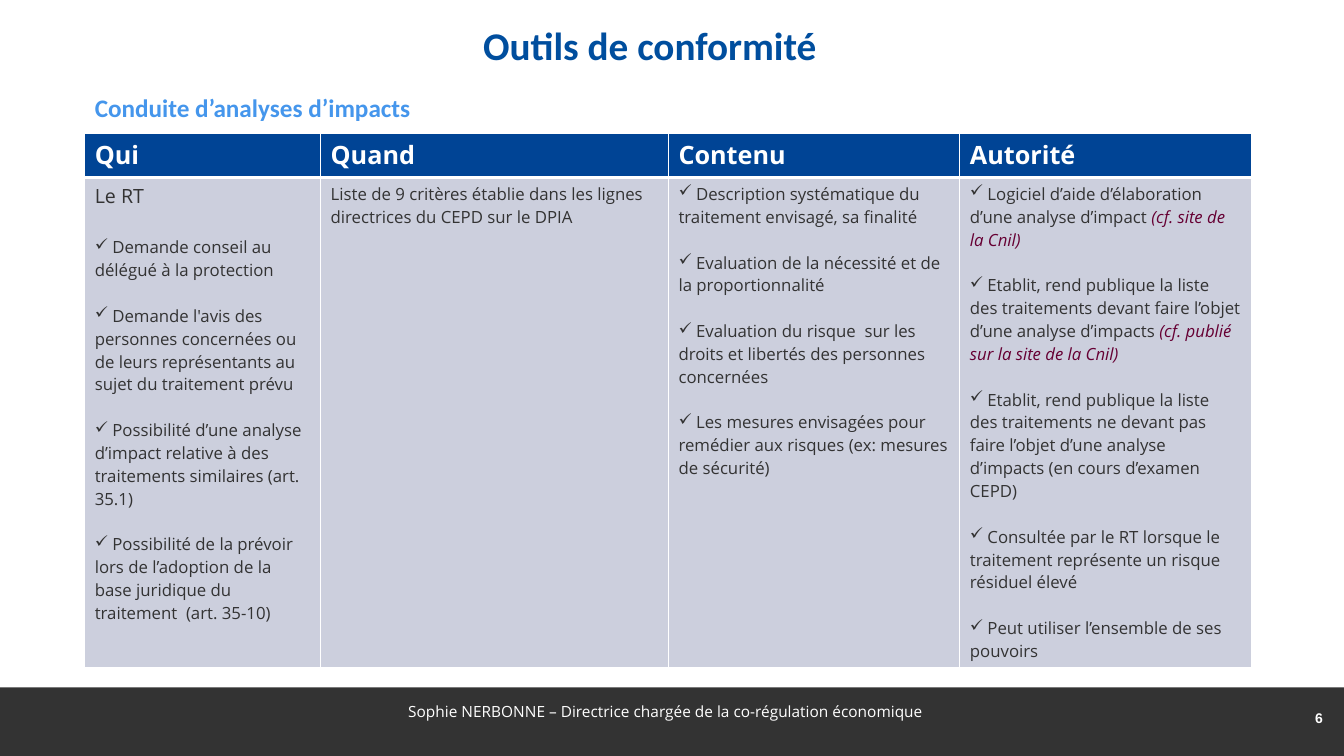
from lxml import etree
from pptx import Presentation
from pptx import util as u
from pptx.dml.color import RGBColor
from pptx.enum import shapes, text
from pptx.oxml.ns import qn

COLORS = {
    "white": "FFFFFF", "dark": "333333", "title": "004E9E", "subtitle": "4596EC",
    "header": "004495", "cell": "CCCFDD", "accent": "660033",
}
TITLE = {"name": "Calibri", "size": 28, "bold": True, "color": "title"}
SUBTITLE = {"name": "Calibri", "size": 18, "bold": True, "color": "subtitle"}
HEADER = {"name": "Open Sans", "size": 18, "bold": True, "color": "white"}
LEAD = {"name": "Open Sans", "size": 14, "bold": False, "color": "dark"}
BODY = {**LEAD, "size": 12}
ACCENT = {**BODY, "italic": True, "color": "accent"}
FOOTER = {"name": "Open Sans", "size": 11, "color": "white"}
NUMBER = {"name": "Arial", "size": 10, "bold": True, "color": "white"}

LEAD_GAP, ITEM_GAP = 19, 16.3
COL_WIDTHS = [2.34, 3.45, 2.89, 2.89]
ROW_HEIGHTS = [0.44, 4.85]

COLUMNS = [
    ("Qui", "Le RT", [
        ["Demande conseil au délégué à la protection"],
        ["Demande l'avis des personnes concernées ou de leurs représentants "
         "au sujet du traitement prévu"],
        ["Possibilité d’une analyse d’impact relative à des traitements "
         "similaires (art. 35.1)"],
        ["Possibilité de la prévoir lors de l’adoption de la base juridique "
         "du traitement  (art. 35-10)"],
    ]),
    ("Quand", "Liste de 9 critères établie dans les lignes directrices du CEPD "
     "sur le DPIA", []),
    ("Contenu", None, [
        ["Description systématique du traitement envisagé, sa finalité"],
        ["Evaluation de la nécessité et de la proportionnalité"],
        ["Evaluation du risque  sur les droits et libertés des personnes concernées"],
        ["Les mesures envisagées pour remédier aux risques (ex: mesures de sécurité)"],
    ]),
    ("Autorité", None, [
        ["Logiciel d’aide d’élaboration d’une analyse d’impact ",
         "(cf. site de la Cnil)"],
        ["Etablit, rend publique la liste des traitements devant faire l’objet "
         "d’une analyse d’impacts ", "(cf. publié sur la site de la Cnil)"],
        ["Etablit, rend publique la liste des traitements ne devant pas faire "
         "l’objet d’une analyse d’impacts (en cours d’examen CEPD)"],
        ["Consultée par le RT lorsque le traitement représente un risque "
         "résiduel élevé"],
        ["Peut utiliser l’ensemble de ses pouvoirs"],
    ]),
]


def rgb(name):
    return RGBColor.from_string(COLORS[name])


def add_run(p, content, fmt):
    r = p.add_run()
    r.text = content
    for key, value in fmt.items():
        if key == "color":
            r.font.color.rgb = rgb(value)
        else:
            setattr(r.font, key, u.Pt(value) if key == "size" else value)


def place(sp, left, top, width, height):
    sp.left, sp.top = u.Inches(left), u.Inches(top)
    sp.width, sp.height = u.Inches(width), u.Inches(height)


def write_box(sp, content, fmt, align, anchor):
    tf = sp.text_frame
    tf.word_wrap = True
    tf.auto_size = text.MSO_AUTO_SIZE.NONE
    tf.vertical_anchor = anchor
    p = tf.paragraphs[0]
    p.alignment = align
    add_run(p, content, fmt)
    return p


def fill_placeholder(sp, box, content, fmt, align, anchor):
    place(sp, *box)
    p = write_box(sp, content, fmt, align, anchor)
    p.space_before = u.Pt(0)
    pPr = p._p.get_or_add_pPr()
    pPr.set("marL", "0")
    pPr.set("indent", "0")
    etree.SubElement(pPr, qn("a:buNone"))


def add_text(s, box, content, fmt, align, anchor):
    sp = s.shapes.add_textbox(*map(u.Inches, box))
    write_box(sp, content, fmt, align, anchor)


def add_bar(s, box, color):
    sp = s.shapes.add_shape(shapes.MSO_SHAPE.RECTANGLE, *map(u.Inches, box))
    sp.shadow.inherit = False
    sp.fill.solid()
    sp.fill.fore_color.rgb = rgb(color)
    sp.line.fill.background()


def style_cell(cell, color, bottom):
    cell.fill.solid()
    cell.fill.fore_color.rgb = rgb(color)
    tcPr = cell._tc.get_or_add_tcPr()
    for i, (side, points) in enumerate([("L", 1), ("R", 1), ("T", 1), ("B", bottom)]):
        ln = etree.Element(qn("a:ln" + side), w=str(u.Pt(points)))
        solid = etree.SubElement(ln, qn("a:solidFill"))
        etree.SubElement(solid, qn("a:srgbClr"), val=COLORS["white"])
        tcPr.insert(i, ln)


def add_check(p, parts):
    pPr = p._p.get_or_add_pPr()
    pPr.set("marL", "0")
    pPr.set("indent", "0")
    etree.SubElement(pPr, qn("a:buChar"), char="✓")
    for part, fmt in zip(parts, (BODY, ACCENT)):
        add_run(p, " " + part if fmt is BODY else part, fmt)


def fill_cell(cell, lead, items):
    tf = cell.text_frame
    p = tf.paragraphs[0]
    if lead:
        add_run(p, lead, LEAD if items else BODY)
    for i, parts in enumerate(items):
        if i or lead:
            p = tf.add_paragraph()
            p.space_before = u.Pt(ITEM_GAP if i else LEAD_GAP)
        add_check(p, parts)


def add_tools_table(s, left, top):
    size = sum(COL_WIDTHS), sum(ROW_HEIGHTS)
    frame = s.shapes.add_table(2, len(COLUMNS), *map(u.Inches, (left, top, *size)))
    table = frame.table
    for row, height in zip(table.rows, ROW_HEIGHTS):
        row.height = u.Inches(height)
    for i, (heading, lead, items) in enumerate(COLUMNS):
        table.columns[i].width = u.Inches(COL_WIDTHS[i])
        head, body = table.cell(0, i), table.cell(1, i)
        style_cell(head, "header", 3)
        style_cell(body, "cell", 1)
        add_run(head.text_frame.paragraphs[0], heading, HEADER)
        fill_cell(body, lead, items)


def main():
    prs = Presentation()
    prs.slide_width, prs.slide_height = u.Inches(13.33), u.Inches(7.5)
    s = prs.slides.add_slide(prs.slide_layouts[1])
    left, center, right = text.PP_ALIGN.LEFT, text.PP_ALIGN.CENTER, text.PP_ALIGN.RIGHT
    top, middle = text.MSO_ANCHOR.TOP, text.MSO_ANCHOR.MIDDLE

    add_bar(s, (0, 6.82, 13.33, 0.68), "dark")
    fill_placeholder(s.shapes.title, (0.78, 0.13, 11.33, 0.63),
                     "Outils de conformité", TITLE, center, middle)
    fill_placeholder(s.placeholders[1], (0.84, 0.87, 9.33, 0.4),
                     "Conduite d’analyses d’impacts", SUBTITLE, left, top)
    add_tools_table(s, 0.84, 1.32)
    add_text(s, (3.95, 6.92, 5.35, 0.4),
             "Sophie NERBONNE – Directrice chargée de la co-régulation économique",
             FOOTER, left, top)
    add_text(s, (12.81, 6.92, 0.41, 0.4), "6", NUMBER, right, middle)
    prs.save("out.pptx")


if __name__ == "__main__":
    main()
